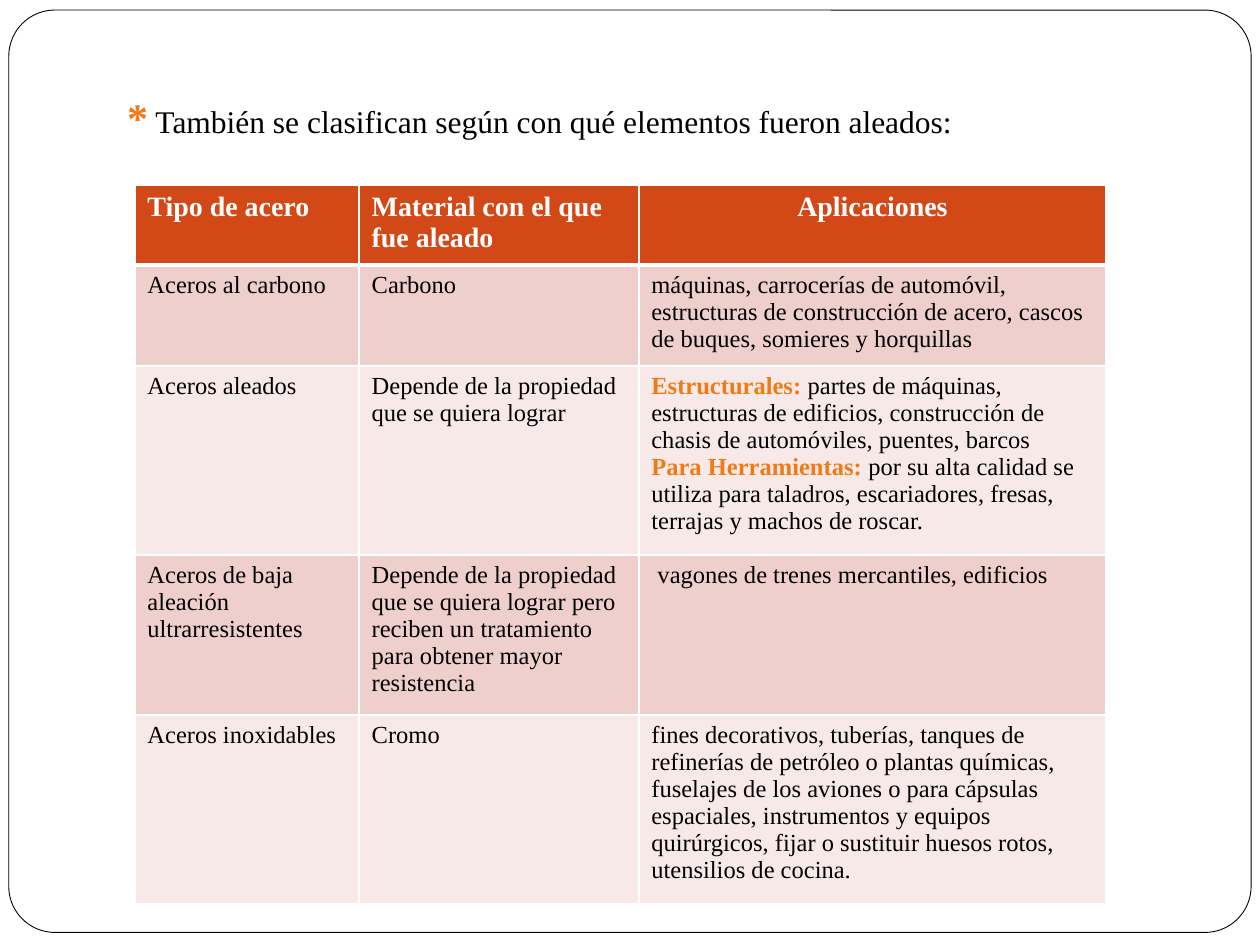
import pptx
import pptx.dml.color
import pptx.enum.shapes
import pptx.enum.text
import pptx.oxml
import pptx.oxml.ns
import pptx.util
from dataclasses import dataclass

Inches = pptx.util.Inches
ALIGN = pptx.enum.text.PP_ALIGN


@dataclass(frozen=True)
class Theme:
    font: str = "Times New Roman"
    white: str = "FFFFFF"
    black: str = "000000"
    accent: str = "F17A17"
    header: str = "D34817"
    bands: tuple = ("EFCFCC", "F7E9E8")
    star_size: int = 24
    title_size: int = 18
    header_size: int = 16
    body_size: int = 14


theme = Theme()
rgb = pptx.dml.color.RGBColor.from_string


def add_text(para, text, size=theme.body_size, color=theme.black, bold=False, align=ALIGN.LEFT):
    para.alignment = align
    span = para.add_run()
    span.text = text
    span.font.name = theme.font
    span.font.size = pptx.util.Pt(size)
    span.font.bold = bold
    span.font.color.rgb = rgb(color)


def set_borders(cell, bottom=1, top=1):
    """Draw white cell borders; widths are in points."""
    properties = cell._tc.get_or_add_tcPr()
    widths = {"lnL": 1, "lnR": 1, "lnT": top, "lnB": bottom}
    for position, (side, width) in enumerate(widths.items()):
        border = pptx.oxml.parse_xml(
            f'<a:{side} {pptx.oxml.ns.nsdecls("a")} w="{pptx.util.Pt(width)}">'
            f'<a:solidFill><a:srgbClr val="{theme.white}"/></a:solidFill></a:{side}>'
        )
        properties.insert(position, border)


deck = pptx.Presentation()
deck.slide_width, deck.slide_height = Inches(10), Inches(7.5)
page = deck.slides.add_slide(deck.slide_layouts[5])

# Heading
title = page.shapes.title
title.left, title.top, title.width, title.height = map(Inches, (0.91, 0.68, 8.19, 0.5))
title.text_frame.word_wrap = True
title.text_frame.auto_size = pptx.enum.text.MSO_AUTO_SIZE.SHAPE_TO_FIT_TEXT
title.text_frame.vertical_anchor = pptx.enum.text.MSO_ANCHOR.TOP
heading = title.text_frame.paragraphs[0]
add_text(heading, "*", size=theme.star_size, color=theme.accent, bold=True)
add_text(heading, " También se clasifican según con qué elementos fueron aleados:",
         size=theme.title_size)

# Rounded frame, behind the heading
frame = page.shapes.add_shape(pptx.enum.shapes.MSO_SHAPE.ROUNDED_RECTANGLE,
                              Inches(0.07), Inches(0.08), Inches(9.86), Inches(7.32))
frame.adjustments[0] = 0.05
frame.shadow.inherit = False
frame.fill.solid()
frame.fill.fore_color.rgb = rgb(theme.white)
frame.line.color.rgb = rgb(theme.black)
frame.line.width = pptx.util.Pt(0.5)
title.element.addprevious(frame.element)

# Table: a cell is a list of paragraphs, each an emphasised lead and plain text
headers = ["Tipo de acero", "Material con el que fue aleado", "Aplicaciones"]
steels = [
    ("Aceros al carbono", "Carbono",
     [("", "máquinas, carrocerías de automóvil, estructuras de construcción de acero, "
           "cascos de buques, somieres y horquillas")]),
    ("Aceros aleados", "Depende de la propiedad que se quiera lograr",
     [("Estructurales: ", "partes de máquinas, estructuras de edificios, construcción de "
                          "chasis de automóviles, puentes, barcos"),
      ("Para Herramientas: ", "por su alta calidad se utiliza para taladros, escariadores, "
                              "fresas, terrajas y machos de roscar.")]),
    ("Aceros de baja aleación ultrarresistentes",
     "Depende de la propiedad que se quiera lograr pero reciben un tratamiento "
     "para obtener mayor resistencia",
     [("", " vagones de trenes mercantiles, edificios")]),
    ("Aceros inoxidables", "Cromo",
     [("", "fines decorativos, tuberías, tanques de refinerías de petróleo o plantas químicas, "
           "fuselajes de los aviones o para cápsulas espaciales, instrumentos y equipos "
           "quirúrgicos, fijar o sustituir huesos rotos, utensilios de cocina.")]),
]
column_widths = [1.78, 2.22, 3.71]
row_heights = [0.63, 0.8, 1.5, 1.27, 1.5]

table = page.shapes.add_table(len(row_heights), len(column_widths), Inches(1.07), Inches(1.47),
                              Inches(sum(column_widths)), Inches(sum(row_heights))).table
for column, width in zip(table.columns, column_widths):
    column.width = Inches(width)
for row, height in zip(table.rows, row_heights):
    row.height = Inches(height)

for cell, text in zip(table.rows[0].cells, headers):
    cell.fill.solid()
    cell.fill.fore_color.rgb = rgb(theme.header)
    set_borders(cell, bottom=3)
    add_text(cell.text_frame.paragraphs[0], text, size=theme.header_size, color=theme.white,
             bold=True, align=ALIGN.CENTER if text == headers[-1] else ALIGN.LEFT)

for index, (steel, material, uses) in enumerate(steels):
    contents = [[("", steel)], [("", material)], uses]
    for cell, paragraphs in zip(table.rows[index + 1].cells, contents):
        cell.fill.solid()
        cell.fill.fore_color.rgb = rgb(theme.bands[index % 2])
        set_borders(cell, top=3 if index == 0 else 1)
        for number, (lead, text) in enumerate(paragraphs):
            box = cell.text_frame
            para = box.add_paragraph() if number else box.paragraphs[0]
            if lead:
                add_text(para, lead, color=theme.accent, bold=True)
            add_text(para, text)

deck.save("out.pptx")
